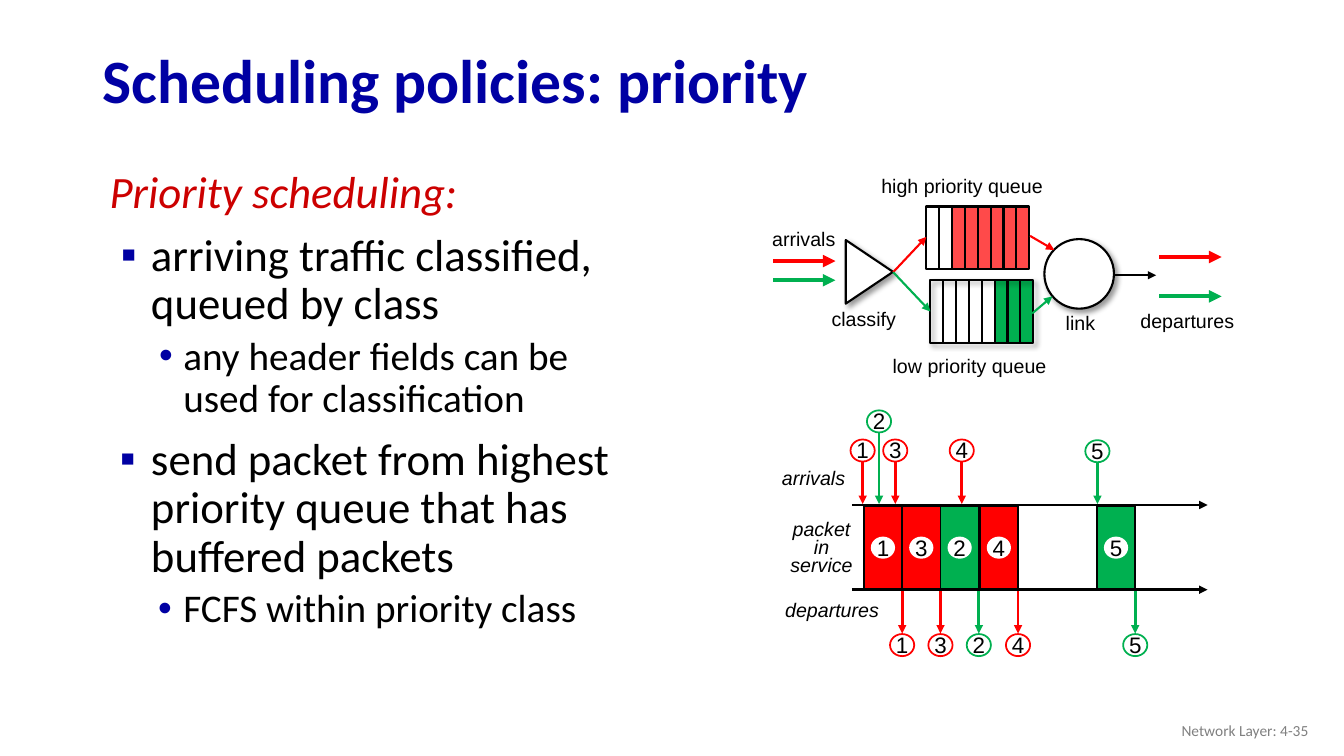
import lxml.etree
import pptx
import pptx.dml.color
import pptx.enum.shapes
import pptx.enum.text
import pptx.oxml.ns
import pptx.util

Pt = pptx.util.Pt
SHAPE = pptx.enum.shapes.MSO_SHAPE
ALIGN = pptx.enum.text.PP_ALIGN
ANCHOR = pptx.enum.text.MSO_ANCHOR

RED, GREEN, BLACK, WHITE = "FF0000", "00B050", "000000", "FFFFFF"
NAVY, CRIMSON, GREY = "0000A3", "CC0000", "808080"
CELLS, CELL_WIDTH, QUEUE_HEIGHT = 8, 9.18, 44.6
PACKET_WIDTH, PACKET_TOP, PACKET_HEIGHT = 27.4, 361.3, 59.4
BADGE_WIDTH, BADGE_HEIGHT = 17.3, 15.8

PACKETS = [
    ("1", RED, 616.2, 321.8, 617),
    ("3", RED, 639.5, 321.8, 644.4),
    ("2", GREEN, 627.9, 301, 671.8),
    ("4", RED, 687, 321.8, 699.8),
    ("5", GREEN, 783.9, 322.3, 783.5),
]


def rgb(value):
    """Turn a hex string into a colour."""
    return pptx.dml.color.RGBColor.from_string(value)


def set_all(target, values):
    """Set every attribute in a dict of format values."""
    for name, value in values.items():
        setattr(target, name, value)


def add_xml(parent, tag, **attributes):
    """Append a DrawingML element to a parent."""
    return lxml.etree.SubElement(parent, pptx.oxml.ns.qn(tag), attributes)


def add_figure(slide, kind, box, fill=None, line=None, weight=1.5, alpha=None, shadow=False):
    """Draw a preset shape with an optional outline, transparency and shadow."""
    figure = slide.shapes.add_shape(kind, *map(Pt, box))
    figure.shadow.inherit = False
    if fill:
        figure.fill.solid()
        figure.fill.fore_color.rgb = rgb(fill)
    else:
        figure.fill.background()
    if alpha:
        colour = figure._element.spPr.find(".//" + pptx.oxml.ns.qn("a:srgbClr"))
        add_xml(colour, "a:alpha", val=str(alpha * 1000))
    if line:
        figure.line.color.rgb = rgb(line)
        figure.line.width = Pt(weight)
    else:
        figure.line.fill.background()
    if shadow:
        effects = figure._element.spPr.find(pptx.oxml.ns.qn("a:effectLst"))
        cast = add_xml(effects, "a:outerShdw", blurRad=str(Pt(4)), dist=str(Pt(3)),
                       dir="2700000", algn="tl", rotWithShape="0")
        add_xml(add_xml(cast, "a:srgbClr", val=BLACK), "a:alpha", val="40000")
    return figure


def add_line(slide, start, end, colour, weight=1.5, arrow=True):
    """Draw a straight line, with an arrowhead at its end by default."""
    line = slide.shapes.add_connector(
        pptx.enum.shapes.MSO_CONNECTOR.STRAIGHT, *map(Pt, (*start, *end)))
    line.line.color.rgb = rgb(colour)
    line.line.width = Pt(weight)
    if arrow:
        add_xml(line.line._get_or_add_ln(), "a:tailEnd", type="triangle")
    add_xml(line._element.spPr, "a:effectLst")


def add_bullet(paragraph, sign, indent, hanging):
    """Give a paragraph its indents and an optional bullet sign."""
    properties = paragraph._p.get_or_add_pPr()
    properties.set("marL", str(Pt(indent)))
    properties.set("indent", str(-Pt(hanging)))
    if sign:
        add_xml(add_xml(properties, "a:buClr"), "a:srgbClr", val=NAVY)
        add_xml(properties, "a:buFont", typeface="Arial")
        add_xml(properties, "a:buChar", char=sign)


def add_run(paragraph, text, colour, font):
    """Add text in one colour and font format."""
    run = paragraph.add_run()
    run.text = text
    run.font.color.rgb = rgb(colour)
    set_all(run.font, font)


def add_text(slide, box, text, font, colour=BLACK, layout=None, frame=None):
    """Add a text box with one paragraph."""
    text_frame = slide.shapes.add_textbox(*map(Pt, box)).text_frame
    set_all(text_frame, {"word_wrap": True, **(frame or {})})
    set_all(text_frame.paragraphs[0], layout or {})
    add_run(text_frame.paragraphs[0], text, colour, font)


def add_label(slide, box, text, size=14, italic=False):
    """Add a centred diagram label on one line."""
    add_text(slide, box, text, {"size": Pt(size), "name": "Arial", "italic": italic},
             layout={"alignment": ALIGN.CENTER}, frame={"word_wrap": False})


def add_outline(slide, box, points):
    """Add a box of bulleted points."""
    text_frame = slide.shapes.add_textbox(*map(Pt, box)).text_frame
    text_frame.word_wrap = True
    for index, (text, sign, indent, hanging, font, colour) in enumerate(points):
        paragraph = text_frame.add_paragraph() if index else text_frame.paragraphs[0]
        level = 1 if sign == "•" else 0
        add_bullet(paragraph, sign, indent, hanging)
        gap = 0 if index == 0 else 5 if level else 10
        set_all(paragraph, {"level": level, "line_spacing": 0.9, "space_before": Pt(gap)})
        add_run(paragraph, text, colour, {"name": "Calibri", **font})


def add_queue(slide, left, top, colour, waiting, alpha=None, shadow=False):
    """Draw a queue of cells with the waiting ones filled from the right."""
    width = CELLS * CELL_WIDTH
    filled = waiting * CELL_WIDTH
    add_figure(slide, SHAPE.RECTANGLE, (left + width - filled, top, filled, QUEUE_HEIGHT),
               colour, alpha=alpha)
    add_figure(slide, SHAPE.RECTANGLE, (left, top, width, QUEUE_HEIGHT), line=BLACK, shadow=shadow)
    for cell in range(1, CELLS):
        x = left + cell * CELL_WIDTH
        add_line(slide, (x, top), (x, top + QUEUE_HEIGHT), BLACK, arrow=False)


def add_badge(slide, x, y, number, line=None):
    """Draw a numbered white oval around a centre."""
    add_figure(slide, SHAPE.OVAL,
               (x - BADGE_WIDTH / 2, y - BADGE_HEIGHT / 2, BADGE_WIDTH, BADGE_HEIGHT),
               WHITE, line, 1.25)
    add_label(slide, (x - 11.9, y - 13.5, 23.8, 26.6), number, 16)


def add_router(slide):
    """Draw the classifier, both queues and the link."""
    add_queue(slide, 664.6, 200.2, GREEN, 3, shadow=True)
    add_queue(slide, 661.7, 147.5, RED, 6, alpha=71)
    classifier = add_figure(slide, SHAPE.ISOSCELES_TRIANGLE, (598.3, 177.3, 45.4, 33.8),
                            WHITE, BLACK, shadow=True)
    classifier.rotation = 90
    add_figure(slide, SHAPE.OVAL, (746, 170.8, 49.7, 49.7), WHITE, BLACK, shadow=True)
    for start, end, colour in [
        ((638, 194.4), (661.7, 169.2), RED),
        ((638, 194.4), (664.6, 222.5), GREEN),
        ((735.8, 168.5), (753.1, 178.6), RED),
        ((737.3, 223.9), (751.7, 211.7), GREEN),
        ((795.6, 196.6), (825.8, 196.6), BLACK),
    ]:
        add_line(slide, start, end, colour)
    for left, y, colour in [(552.2, 186.5, RED), (552.2, 200.2, GREEN),
                            (828, 183.6, RED), (828, 211.7, GREEN)]:
        add_line(slide, (left, y), (left + 44.6, y), colour, 3)
    for text, left, top, width in [
        ("high priority queue", 622.1, 121, 130.3),
        ("low priority queue", 630, 249.1, 125.3),
        ("arrivals", 544.3, 158.4, 59.8),
        ("classify", 586.1, 216, 61.9),
        ("departures", 807.1, 217.4, 82.1),
        ("link", 753.8, 218.2, 36),
    ]:
        add_label(slide, (left, top, width, 24.5), text)


def add_timeline(slide):
    """Draw when each packet arrives, is served and departs."""
    for number, colour, _, _, left in PACKETS:
        add_figure(slide, SHAPE.RECTANGLE, (left, PACKET_TOP, PACKET_WIDTH, PACKET_HEIGHT),
                   colour, BLACK, 1.25)
        add_badge(slide, left + PACKET_WIDTH / 2, 391.2, number)
    for y in (360.7, 421.2):
        add_line(slide, (608.4, y), (862.6, y), BLACK, 2)
    for number, colour, arrival, badge_y, left in PACKETS:
        departure = left + PACKET_WIDTH
        add_badge(slide, arrival, badge_y, number, colour)
        add_line(slide, (arrival, badge_y + BADGE_HEIGHT / 2), (arrival, 360), colour, 2)
        add_badge(slide, departure, 460.8, number, colour)
        add_line(slide, (departure, 422.4), (departure, 452.5), colour, 2)
    add_label(slide, (549.4, 329, 63.4, 24.5), "arrivals", italic=True)
    add_label(slide, (551.5, 423.4, 85.7, 24.5), "departures", italic=True)
    add_text(slide, (553, 369.4, 67.7, 46.8), "packet in service",
             {"size": Pt(14), "name": "Arial", "italic": True},
             layout={"alignment": ALIGN.CENTER, "line_spacing": Pt(12.8)})


def main():
    """Build the slide and save it."""
    deck = pptx.Presentation()
    set_all(deck, {"slide_width": Pt(960), "slide_height": Pt(540)})
    slide = deck.slides.add_slide(deck.slide_layouts[6])
    policy, detail = {"size": Pt(32)}, {"size": Pt(28)}
    add_text(slide, (66.2, 24.5, 828, 70.6), "Scheduling policies: priority",
             {"size": Pt(44), "name": "Calibri", "bold": True}, NAVY,
             {"line_spacing": 0.9}, {"vertical_anchor": ANCHOR.MIDDLE})
    add_outline(slide, (60.5, 118, 400.3, 211), [
        ("Priority scheduling:", None, 28, 17.3, {**policy, "italic": True}, CRIMSON),
        ("arriving traffic classified, queued by class", "▪", 40.3, 21.6, policy, BLACK),
        ("any header fields can be used for classification", "•", 63.4, 17.3, detail, BLACK),
    ])
    add_outline(slide, (60.5, 308.2, 400.3, 154.8), [
        ("send packet from highest priority queue that has buffered packets",
         "▪", 40.3, 22.3, policy, BLACK),
        ("FCFS within priority class", "•", 63.4, 18, detail, BLACK),
    ])
    add_router(slide)
    add_timeline(slide)
    add_text(slide, (725.8, 507.6, 216, 28.8), "Network Layer: 4-35",
             {"size": Pt(11), "name": "Calibri"}, GREY,
             {"alignment": ALIGN.RIGHT}, {"vertical_anchor": ANCHOR.MIDDLE})
    deck.save("out.pptx")


if __name__ == "__main__":
    main()
